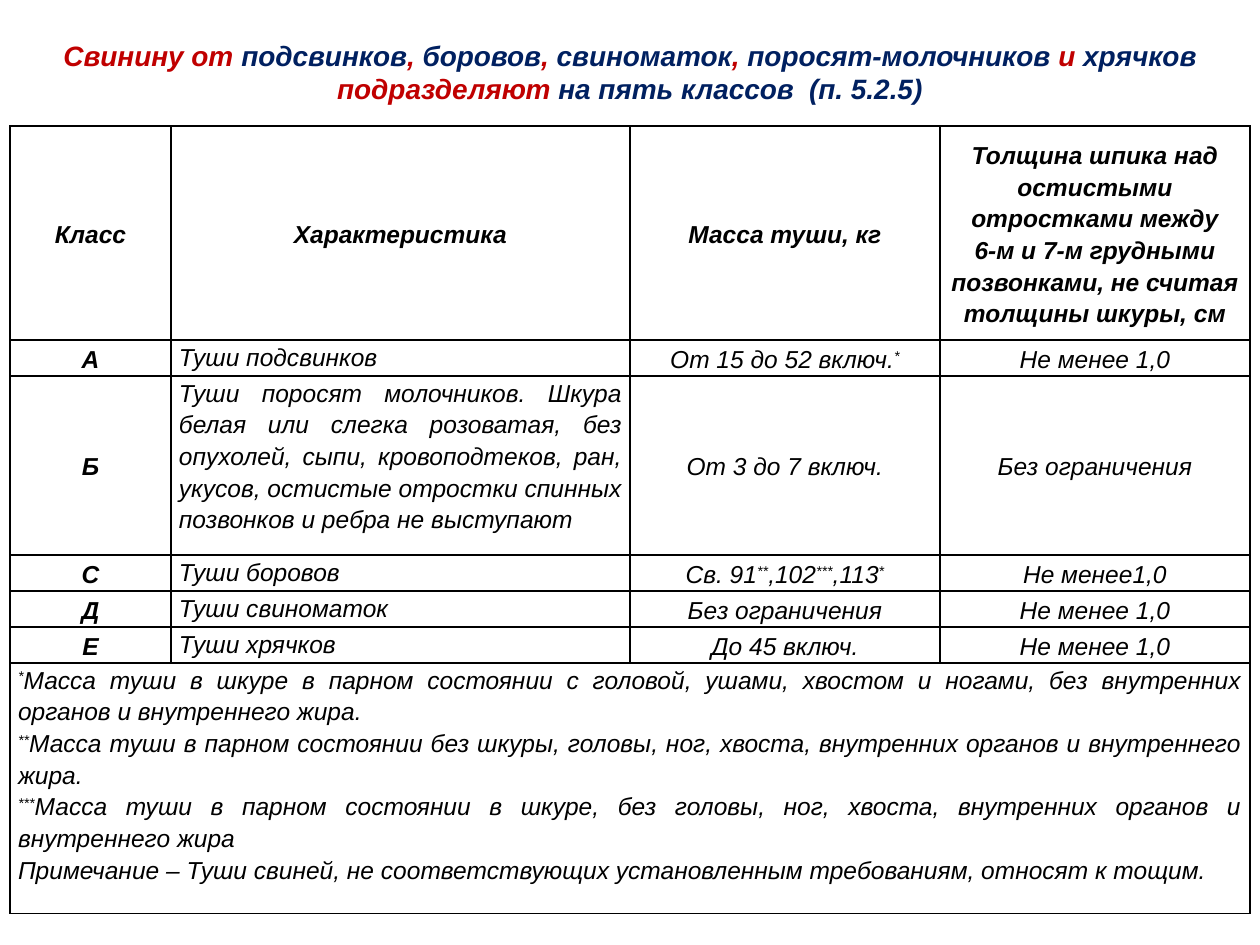
from dataclasses import dataclass
from itertools import cycle, groupby

from lxml.etree import SubElement
from pptx import Presentation
from pptx.dml.color import RGBColor
from pptx.enum.text import MSO_ANCHOR as Anchor
from pptx.enum.text import MSO_AUTO_SIZE as AutoSize
from pptx.enum.text import PP_ALIGN as Align
from pptx.oxml.ns import qn
from pptx.util import Emu, Pt

EMU_PER_PX = 914400 / 126
BLACK, RED, NAVY = "000000", "C00000", "002060"
COLUMN_WIDTHS = (161, 459, 310, 310)
HEADINGS = (
    "Класс",
    "Характеристика",
    "Масса туши, кг",
    "Толщина шпика над остистыми отростками между\n"
    "6-м и 7-м грудными позвонками, не считая толщины шкуры, см",
)
TITLE_PARTS = (
    "Свинину от ", "подсвинков", ", ", "боровов", ", ", "свиноматок", ", ",
    "поросят-молочников ", "и ", "хрячков ", "подразделяют ",
    "на пять классов  (п. 5.2.5)",
)
FOOTNOTES = "\n".join((
    "*Масса туши в шкуре в парном состоянии с головой, ушами, хвостом и ногами, "
    "без внутренних органов и внутреннего жира.",
    "**Масса туши в парном состоянии без шкуры, головы, ног, хвоста, "
    "внутренних органов и внутреннего жира.",
    "***Масса туши в парном состоянии в шкуре, без головы, ног, хвоста, "
    "внутренних органов и внутреннего жира",
    "Примечание – Туши свиней, не соответствующих установленным требованиям, "
    "относят к тощим.",
))


@dataclass
class CarcassClass:
    name: str
    description: str
    mass: str
    fat: str
    height: int = 36


CLASSES = (
    CarcassClass("А", "Туши подсвинков", "От 15 до 52 включ.*", "Не менее 1,0"),
    CarcassClass(
        "Б",
        "Туши поросят молочников. Шкура белая или слегка розоватая, без опухолей, "
        "сыпи, кровоподтеков, ран, укусов, остистые отростки спинных позвонков "
        "и ребра не выступают",
        "От 3 до 7 включ.", "Без ограничения", 179,
    ),
    CarcassClass("С", "Туши боровов", "Св. 91**,102***,113*", "Не менее1,0"),
    CarcassClass("Д", "Туши свиноматок", "Без ограничения", "Не менее 1,0"),
    CarcassClass("Е", "Туши хрячков", "До 45 включ.", "Не менее 1,0"),
)
ROW_HEIGHTS = (214, *(item.height for item in CLASSES), 251)


def px(length: int) -> Emu:
    return Emu(round(length * EMU_PER_PX))


def color(value: str) -> RGBColor:
    return RGBColor.from_string(value)


def write(paragraph, text: str, *, size=14, fill=BLACK, bold=False,
          align=Align.CENTER, spacing=None) -> None:
    paragraph.alignment = align
    if spacing:
        paragraph.line_spacing = spacing
    for raised, letters in groupby(text, key=lambda letter: letter == "*"):
        run = paragraph.add_run()
        run.text = "".join(letters)
        font = run.font
        font.name, font.size = "Arial", Pt(size)
        font.bold, font.italic = bold, True
        font.color.rgb = color(fill)
        if raised:
            font._element.set("baseline", "30000")


def frame_cell(cell) -> None:
    properties = cell._tc.get_or_add_tcPr()
    for side in ("lnL", "lnR", "lnT", "lnB"):
        line = SubElement(properties, qn(f"a:{side}"), w=str(Pt(1)))
        solid = SubElement(line, qn("a:solidFill"))
        SubElement(solid, qn("a:srgbClr"), val=BLACK)
    cell.fill.background()
    cell.margin_left = cell.margin_right = px(8)
    cell.margin_top = cell.margin_bottom = 0


def fill_cell(cell, text: str, *, bold=False, align=Align.CENTER,
              anchor=Anchor.MIDDLE) -> None:
    cell.vertical_anchor = anchor
    frame = cell.text_frame
    for index, line in enumerate(text.split("\n")):
        paragraph = frame.add_paragraph() if index else frame.paragraphs[0]
        write(paragraph, line, bold=bold, align=align, spacing=1.15)


def add_class_table(slide) -> None:
    shape = slide.shapes.add_table(
        len(ROW_HEIGHTS), len(COLUMN_WIDTHS), px(10), px(126),
        px(sum(COLUMN_WIDTHS)), px(sum(ROW_HEIGHTS)))
    table = shape.table
    table.first_row = table.horz_banding = False
    for column, width in zip(table.columns, COLUMN_WIDTHS):
        column.width = px(width)
    for row, height in zip(table.rows, ROW_HEIGHTS):
        row.height = px(height)
        for cell in row.cells:
            frame_cell(cell)

    for column, heading in enumerate(HEADINGS):
        fill_cell(table.cell(0, column), heading, bold=True)
    for row, item in enumerate(CLASSES, start=1):
        fill_cell(table.cell(row, 0), item.name, bold=True)
        fill_cell(table.cell(row, 1), item.description,
                  align=Align.JUSTIFY, anchor=Anchor.TOP)
        fill_cell(table.cell(row, 2), item.mass)
        fill_cell(table.cell(row, 3), item.fat)

    last = len(ROW_HEIGHTS) - 1
    notes = table.cell(last, 0)
    notes.merge(table.cell(last, len(COLUMN_WIDTHS) - 1))
    fill_cell(notes, FOOTNOTES, align=Align.JUSTIFY, anchor=Anchor.TOP)


def add_title(slide) -> None:
    frame = slide.shapes.add_textbox(px(0), px(32), px(1260), px(81)).text_frame
    frame.word_wrap = True
    frame.auto_size = AutoSize.SHAPE_TO_FIT_TEXT
    for part, fill in zip(TITLE_PARTS, cycle((RED, NAVY))):
        write(frame.paragraphs[0], part, size=16, fill=fill, bold=True)


def main() -> None:
    presentation = Presentation()
    presentation.slide_width, presentation.slide_height = px(1260), px(945)
    slide = presentation.slides.add_slide(presentation.slide_layouts[6])
    add_class_table(slide)
    add_title(slide)
    presentation.save("out.pptx")


if __name__ == "__main__":
    main()
